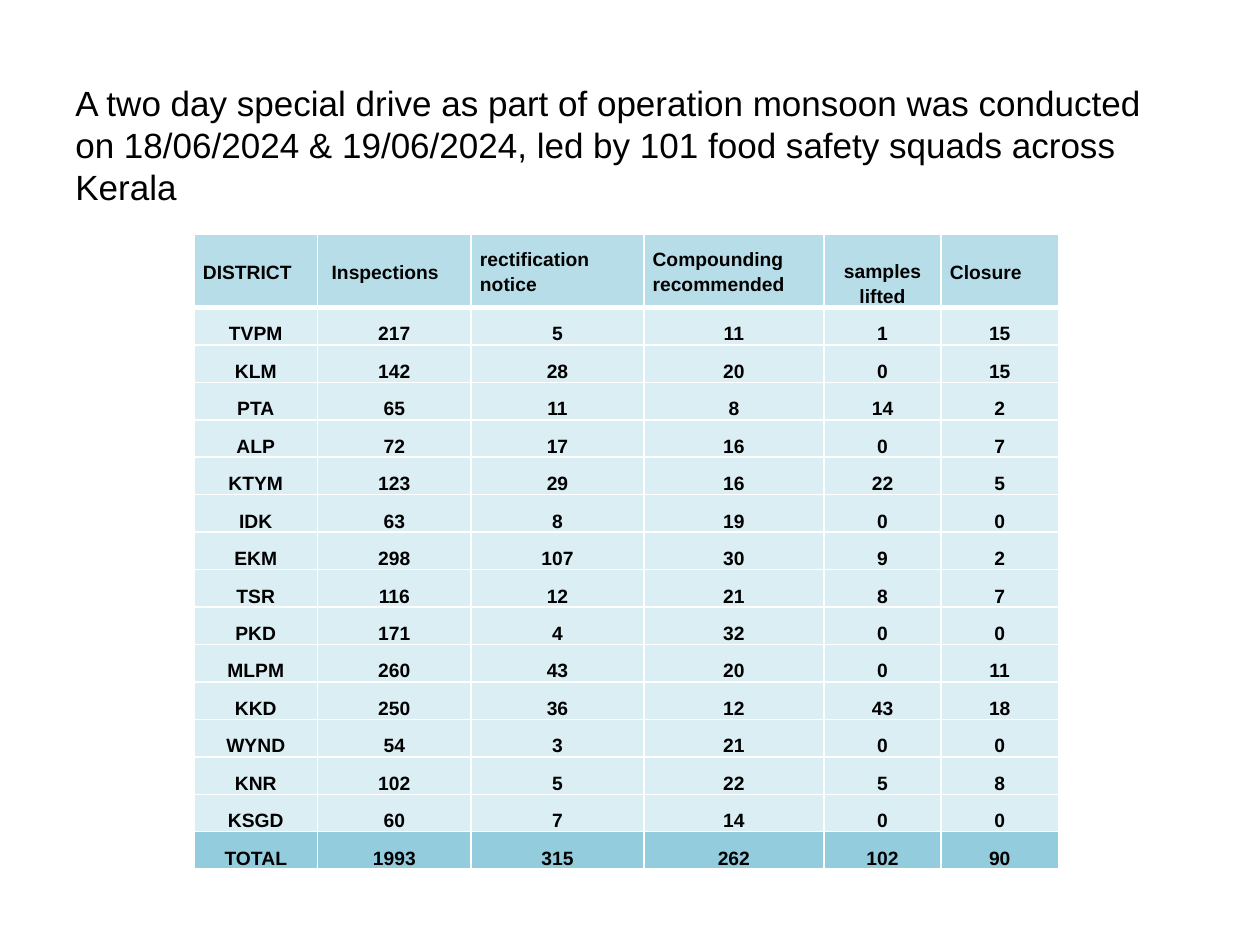
from pptx import Presentation
from pptx.dml.color import RGBColor
from pptx.enum.text import MSO_ANCHOR, PP_ALIGN
from pptx.oxml.ns import qn
from pptx.util import Inches, Pt
from lxml import etree

LEFT, CENTER = PP_ALIGN.LEFT, PP_ALIGN.CENTER
MIDDLE, BOTTOM = MSO_ANCHOR.MIDDLE, MSO_ANCHOR.BOTTOM

COLORS = {
    "text": "000000",
    "border": "FFFFFF",
    "header": "B7DEE8",
    "body": "DBEEF4",
    "total": "93CDDD",
}
INTRO = (
    "A two day special drive as part of operation monsoon was conducted "
    "on 18/06/2024 & 19/06/2024, led by 101 food safety squads across Kerala"
)
HEADERS = ["DISTRICT", " Inspections", "rectification notice",
           "Compounding recommended", "samples lifted", "Closure"]
DISTRICTS = [
    ("TVPM", 217, 5, 11, 1, 15),
    ("KLM", 142, 28, 20, 0, 15),
    ("PTA", 65, 11, 8, 14, 2),
    ("ALP", 72, 17, 16, 0, 7),
    ("KTYM", 123, 29, 16, 22, 5),
    ("IDK", 63, 8, 19, 0, 0),
    ("EKM", 298, 107, 30, 9, 2),
    ("TSR", 116, 12, 21, 8, 7),
    ("PKD", 171, 4, 32, 0, 0),
    ("MLPM", 260, 43, 20, 0, 11),
    ("KKD", 250, 36, 12, 43, 18),
    ("WYND", 54, 3, 21, 0, 0),
    ("KNR", 102, 5, 22, 5, 8),
    ("KSGD", 60, 7, 14, 0, 0),
]
TOTAL = ("TOTAL", 1993, 315, 262, 102, 90)
COLUMN_WIDTHS = [0.98, 1.22, 1.37, 1.43, 0.93, 0.93]
TABLE_HEIGHT, HEADER_HEIGHT = 5.04, 0.58


def write_text(frame, text, size, font, bold=False, align=LEFT, spacing=None):
    para = frame.paragraphs[0]
    para.alignment = align
    para.line_spacing = spacing
    span = para.add_run()
    span.text = text
    span.font.size = Pt(size)
    span.font.name = font
    span.font.bold = bold
    span.font.color.rgb = RGBColor.from_string(COLORS["text"])


class ReportSlide:
    """Holds the text style and the slide being filled."""

    def __init__(self, page, font="Arial"):
        self.page = page
        self.font = font

    def text(self, text, left, top, width, height, size, spacing):
        box = self.page.shapes.add_textbox(
            Inches(left), Inches(top), Inches(width), Inches(height))
        box.text_frame.word_wrap = True
        write_text(box.text_frame, text, size, self.font, spacing=spacing)

    def borders(self, cell, top=1, bottom=1):
        properties = cell._tc.get_or_add_tcPr()
        widths = {"a:lnL": 1, "a:lnR": 1, "a:lnT": top, "a:lnB": bottom}
        for position, (tag, width) in enumerate(widths.items()):
            line = etree.Element(qn(tag), w=str(Pt(width)))
            fill = etree.SubElement(line, qn("a:solidFill"))
            etree.SubElement(fill, qn("a:srgbClr"), val=COLORS["border"])
            properties.insert(position, line)

    def cell(self, cell, text, fill, align, anchor):
        cell.margin_left = cell.margin_right = Inches(0.07)
        cell.margin_top = cell.margin_bottom = 0
        cell.vertical_anchor = anchor
        cell.fill.solid()
        cell.fill.fore_color.rgb = RGBColor.from_string(COLORS[fill])
        write_text(cell.text_frame, text, 11, self.font, bold=True,
                   align=align, spacing=1.15)

    def table(self, rows, left, top, widths, height, header_height):
        table = self.page.shapes.add_table(
            len(rows), len(widths), Inches(left), Inches(top),
            Inches(sum(widths)), Inches(height)).table
        table.first_row = table.horz_banding = False
        for column, width in zip(table.columns, widths):
            column.width = Inches(width)
        row_height = (height - header_height) / (len(rows) - 1)
        last = len(rows) - 1
        for r, values in enumerate(rows):
            table.rows[r].height = Inches(row_height if r else header_height)
            fill = {0: "header", last: "total"}.get(r, "body")
            for c, value in enumerate(values):
                heading = r == 0 and value != "samples lifted"
                cell = table.cell(r, c)
                self.cell(cell, str(value), fill,
                          align=LEFT if heading else CENTER,
                          anchor=MIDDLE if heading else BOTTOM)
                self.borders(cell, top=3 if r == 1 else 1,
                             bottom=3 if r == 0 else 1)


def main():
    deck = Presentation()
    deck.slide_width, deck.slide_height = Inches(10), Inches(7.5)
    report = ReportSlide(deck.slides.add_slide(deck.slide_layouts[6]))
    report.text(INTRO, 0.5, 0.6, 9, 4.95, size=20, spacing=Pt(24))
    report.table([HEADERS, *DISTRICTS, TOTAL], 1.54, 1.86, COLUMN_WIDTHS,
                 TABLE_HEIGHT, HEADER_HEIGHT)
    deck.save("out.pptx")


if __name__ == "__main__":
    main()
